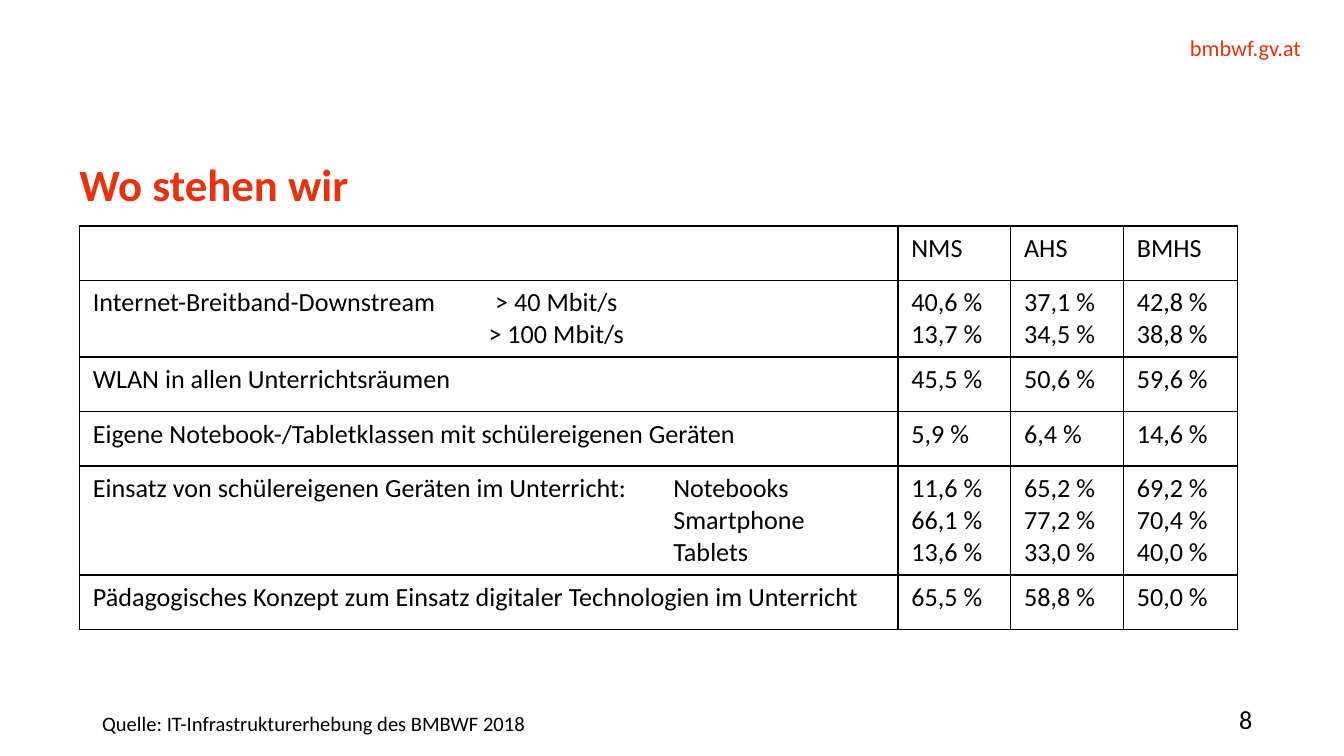
from lxml import etree
from pptx import Presentation
from pptx.dml.color import RGBColor
from pptx.enum.text import MSO_ANCHOR, MSO_AUTO_SIZE, PP_ALIGN
from pptx.oxml.ns import qn
from pptx.util import Cm, Pt

LEFT, RIGHT = PP_ALIGN.LEFT, PP_ALIGN.RIGHT
TOP, MIDDLE = MSO_ANCHOR.TOP, MSO_ANCHOR.MIDDLE
NO_AUTOFIT = MSO_AUTO_SIZE.NONE

RED = RGBColor(0xE6, 0x32, 0x0F)
BLACK = RGBColor(0, 0, 0)
FONT = "Calibri"

COL_WIDTHS = [15.47, 2.13, 2.13, 2.16]
ROW_HEIGHTS = [1.03, 1.45, 1.03, 1.03, 2.06, 1.03]
ROWS = [
    ["", "NMS", "AHS", "BMHS"],
    ["Internet-Breitband-Downstream\t> 40 Mbit/s\n\t> 100 Mbit/s",
     "40,6 %\n13,7 %", "37,1 %\n34,5 %", "42,8 %\n38,8 %"],
    ["WLAN in allen Unterrichtsräumen", "45,5 %", "50,6 %", "59,6 %"],
    ["Eigene Notebook-/Tabletklassen mit schülereigenen Geräten",
     "5,9 %", "6,4 %", "14,6 %"],
    ["Einsatz von schülereigenen Geräten im Unterricht: \tNotebooks\n\tSmartphone\n\tTablets",
     "11,6 %\n66,1 %\n13,6 %", "65,2 %\n77,2 %\n33,0 %", "69,2 %\n70,4 %\n40,0 %"],
    ["Pädagogisches Konzept zum Einsatz digitaler Technologien im Unterricht",
     "65,5 %", "58,8 %", "50,0 %"],
]
TAB_STOPS = {1: (8.76, "ctr"), 4: (10.97, "l")}


def format_text(tf, size, color=BLACK, bold=False, align=LEFT):
    """Apply one look to every run of a text frame."""
    for p in tf.paragraphs:
        p.alignment = align
        for r in p.runs:
            r.font.name = FONT
            r.font.size = Pt(size)
            r.font.bold = bold
            r.font.color.rgb = color


def set_margins(tf, x, y):
    """Set the inner margins of a text frame in centimetres."""
    tf.margin_left = tf.margin_right = Cm(x)
    tf.margin_top = tf.margin_bottom = Cm(y)


def add_title(slide, text):
    """Fill and place the title placeholder."""
    sp = slide.shapes.title
    sp.left, sp.top, sp.width, sp.height = Cm(1.5), Cm(2.92), Cm(22.17), Cm(1.73)
    tf = sp.text_frame
    tf.text = text
    tf.word_wrap = True
    tf.auto_size = NO_AUTOFIT
    tf.vertical_anchor = TOP
    set_margins(tf, 0, 0)
    tf.paragraphs[0].line_spacing = Pt(30)
    format_text(tf, 24, RED, bold=True)


def add_text(slide, text, box, size, color=BLACK, align=LEFT, anchor=TOP, margins=(0, 0)):
    """Add a text box at a place given in centimetres."""
    sp = slide.shapes.add_textbox(*(Cm(v) for v in box))
    tf = sp.text_frame
    tf.text = text
    tf.word_wrap = True
    tf.vertical_anchor = anchor
    set_margins(tf, *margins)
    format_text(tf, size, color, align=align)


def add_tab_stop(p, position, kind):
    """Give a paragraph a single tab stop."""
    tabs = etree.SubElement(p._p.get_or_add_pPr(), qn("a:tabLst"))
    etree.SubElement(tabs, qn("a:tab"), pos=str(Cm(position)), algn=kind)


def add_borders(cell):
    """Draw thin black lines around a cell."""
    tcPr = cell._tc.get_or_add_tcPr()
    for side in ("a:lnL", "a:lnR", "a:lnT", "a:lnB"):
        ln = etree.SubElement(tcPr, qn(side), w=str(Pt(1)))
        fill = etree.SubElement(ln, qn("a:solidFill"))
        etree.SubElement(fill, qn("a:srgbClr"), val=str(BLACK))


def add_survey_table(slide):
    """Add the table of survey results by school type."""
    table = slide.shapes.add_table(
        len(ROWS), len(COL_WIDTHS), Cm(1.5), Cm(4.27),
        Cm(sum(COL_WIDTHS)), Cm(sum(ROW_HEIGHTS))).table
    table.first_row = table.horz_banding = False
    for column, width in zip(table.columns, COL_WIDTHS):
        column.width = Cm(width)
    for i, (height, texts) in enumerate(zip(ROW_HEIGHTS, ROWS)):
        table.rows[i].height = Cm(height)
        for j, text in enumerate(texts):
            cell = table.cell(i, j)
            add_borders(cell)
            cell.fill.background()
            tf = cell.text_frame
            tf.text = text
            if j == 0 and i in TAB_STOPS:
                for p in tf.paragraphs:
                    add_tab_stop(p, *TAB_STOPS[i])
            format_text(tf, 14)


def main():
    """Build the slide and save it."""
    prs = Presentation()
    prs.slide_width, prs.slide_height = Cm(25.4), Cm(14.29)
    slide = prs.slides.add_slide(prs.slide_layouts[5])
    add_text(slide, "bmbwf.gv.at", (18.47, 0.64, 6.12, 0.51), 12, RED, RIGHT)
    add_title(slide, "Wo stehen wir")
    add_text(slide, "8", (21.41, 13.31, 2.26, 0.56), 14, align=RIGHT, anchor=MIDDLE)
    add_survey_table(slide)
    add_text(slide, "Quelle: IT-Infrastrukturerhebung des BMBWF 2018",
             (1.68, 13.31, 19.96, 0.74), 11, margins=(0.25, 0.13))
    prs.save("out.pptx")


if __name__ == "__main__":
    main()
